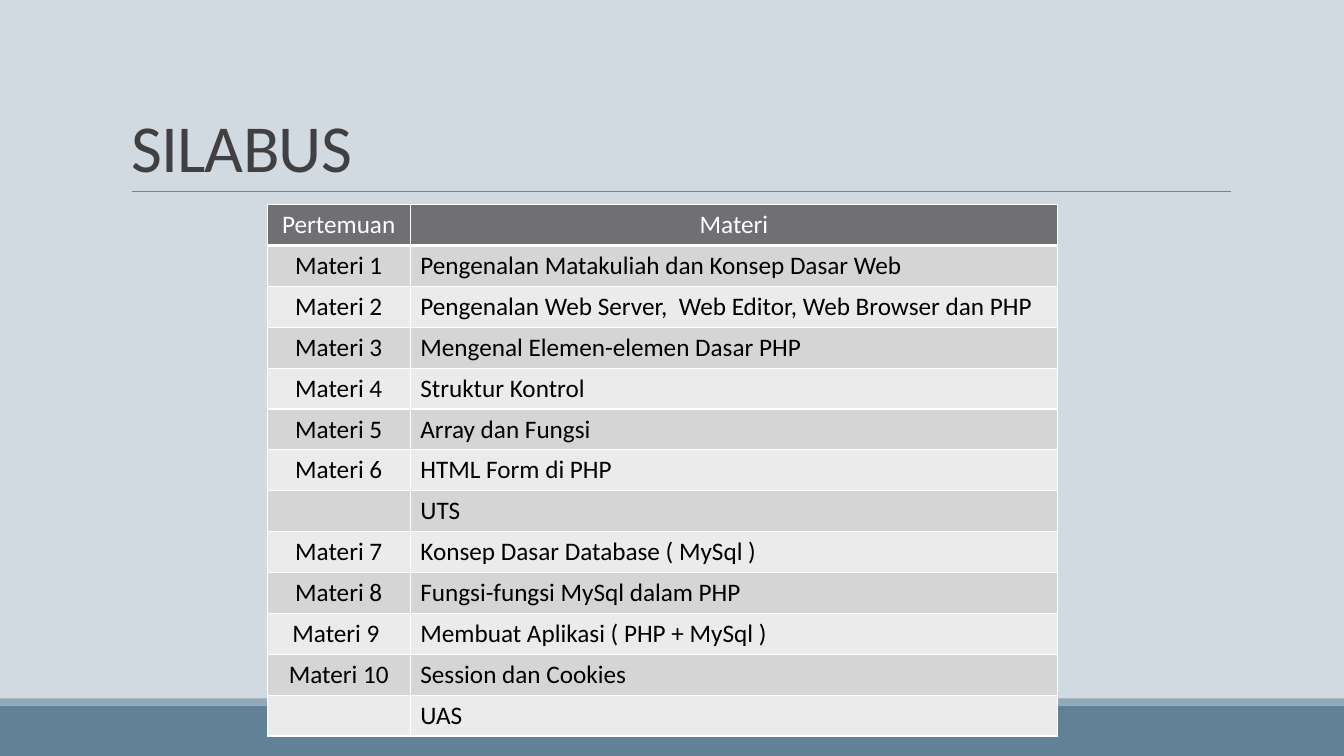
import pptx
import pptx.dml.color
import pptx.enum.shapes
import pptx.enum.text
import pptx.oxml
import pptx.oxml.ns
import pptx.util
from pptx.util import Inches

TOPICS = [
    ("Materi 1", "Pengenalan Matakuliah dan Konsep Dasar Web"),
    ("Materi 2", "Pengenalan Web Server,  Web Editor, Web Browser dan PHP"),
    ("Materi 3", "Mengenal Elemen-elemen Dasar PHP"),
    ("Materi 4", "Struktur Kontrol"),
    ("Materi 5", "Array dan Fungsi"),
    ("Materi 6", "HTML Form di PHP"),
    ("", "UTS"),
    ("Materi 7", "Konsep Dasar Database ( MySql )"),
    ("Materi 8", "Fungsi-fungsi MySql dalam PHP"),
    ("Materi 9 ", "Membuat Aplikasi ( PHP + MySql )"),
    ("Materi 10", "Session dan Cookies"),
    ("", "UAS"),
]


def color(hex_code):
    return pptx.dml.color.RGBColor.from_string(hex_code)


class SlideBuilder:
    font = "Calibri"
    header_fill = "6F6F74"
    band_fills = ("D5D5D6", "EBEBEB")

    def __init__(self, slide):
        self.slide = slide

    def background(self, fill):
        self.slide.background.fill.solid()
        self.slide.background.fill.fore_color.rgb = color(fill)

    def style_text(self, paragraph, size, text_color):
        paragraph.font.name = self.font
        paragraph.font.size = pptx.util.Pt(size)
        paragraph.font.color.rgb = color(text_color)

    def title(self, text, left, top, width, height):
        title = self.slide.shapes.title
        title.left, title.top = Inches(left), Inches(top)
        title.width, title.height = Inches(width), Inches(height)
        frame = title.text_frame
        frame.text = text
        frame.auto_size = pptx.enum.text.MSO_AUTO_SIZE.NONE
        frame.vertical_anchor = pptx.enum.text.MSO_ANCHOR.BOTTOM
        heading = frame.paragraphs[0]
        heading.alignment = pptx.enum.text.PP_ALIGN.LEFT
        heading.line_spacing = 0.85
        self.style_text(heading, 48, "404040")
        heading.runs[0].font._element.set("spc", "-50")

    def band(self, top, height, fill):
        band = self.slide.shapes.add_shape(
            pptx.enum.shapes.MSO_SHAPE.RECTANGLE,
            Inches(0), Inches(top), Inches(13.33), Inches(height))
        band.shadow.inherit = False
        band.fill.solid()
        band.fill.fore_color.rgb = color(fill)
        band.line.fill.background()

    def rule(self, left, right, y, line_color, weight):
        rule = self.slide.shapes.add_connector(
            pptx.enum.shapes.MSO_CONNECTOR.STRAIGHT,
            Inches(left), Inches(y), Inches(right), Inches(y))
        rule.line.color.rgb = color(line_color)
        rule.line.width = pptx.util.Pt(weight)
        rule._element.spPr.append(pptx.oxml.parse_xml(
            f'<a:effectLst {pptx.oxml.ns.nsdecls("a")}/>'))

    def cell_borders(self, cell, bottom_weight):
        properties = cell._tc.get_or_add_tcPr()
        weights = {"L": 1, "R": 1, "T": 1, "B": bottom_weight}
        # Borders come before the fill in the cell properties
        for position, (side, weight) in enumerate(weights.items()):
            properties.insert(position, pptx.oxml.parse_xml(
                f'<a:ln{side} {pptx.oxml.ns.nsdecls("a")} w="{pptx.util.Pt(weight)}">'
                f'<a:solidFill><a:srgbClr val="FFFFFF"/></a:solidFill></a:ln{side}>'))

    def table(self, rows, left, top, column_widths, row_height):
        table = self.slide.shapes.add_table(
            len(rows), len(column_widths), Inches(left), Inches(top),
            Inches(sum(column_widths)), Inches(row_height * len(rows))).table
        for column, width in zip(table.columns, column_widths):
            column.width = Inches(width)
        for row_number, texts in enumerate(rows):
            table.rows[row_number].height = Inches(row_height)
            is_header = row_number == 0
            fill = self.header_fill if is_header else self.band_fills[(row_number - 1) % 2]
            for column_number, text in enumerate(texts):
                cell = table.cell(row_number, column_number)
                cell.text = text
                cell.fill.solid()
                cell.fill.fore_color.rgb = color(fill)
                self.cell_borders(cell, 3 if is_header else 1)
                paragraph = cell.text_frame.paragraphs[0]
                if is_header or column_number == 0:
                    paragraph.alignment = pptx.enum.text.PP_ALIGN.CENTER
                self.style_text(paragraph, 18, "FFFFFF" if is_header else "000000")
                paragraph.font.bold = False


def main():
    presentation = pptx.Presentation()
    presentation.slide_width = Inches(13.33)
    presentation.slide_height = Inches(7.5)
    title_only = presentation.slide_layouts[5]
    builder = SlideBuilder(presentation.slides.add_slide(title_only))

    # Backdrop and footer bands
    builder.background("D1D9E1")
    builder.band(7, 0.5, "618197")
    builder.band(6.93, 0.07, "92A9B9")

    # Heading with its rule
    builder.title("SILABUS", 1.2, 0.31, 11, 1.59)
    builder.rule(1.31, 12.21, 1.9, "808080", 0.5)

    # Syllabus
    builder.table([("Pertemuan", "Materi")] + TOPICS, 2.65, 2.03, (1.42, 6.42), 5.27 / 13)

    presentation.save("out.pptx")


if __name__ == "__main__":
    main()
